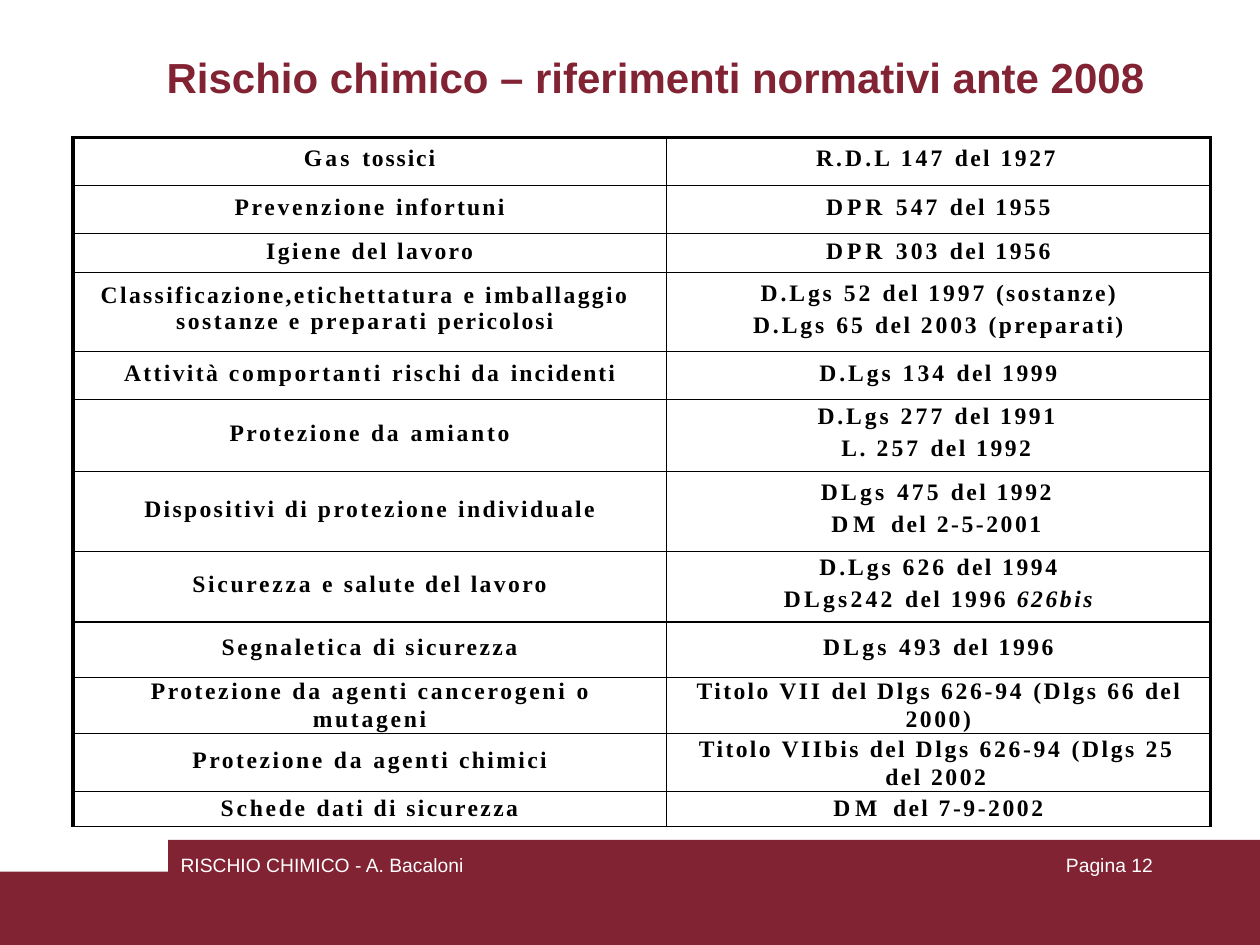
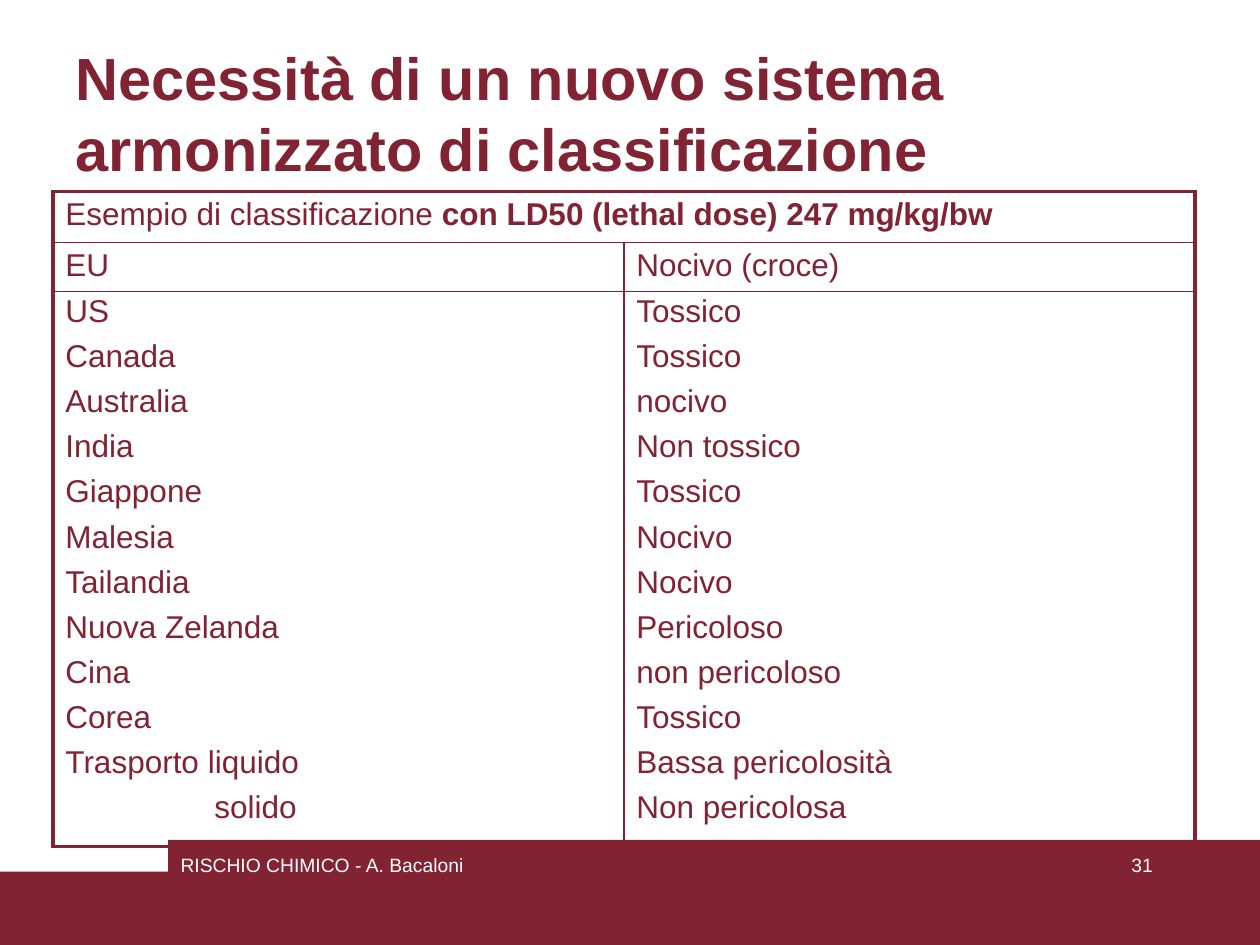
from dataclasses import dataclass, field
from itertools import groupby
from typing import Any, NamedTuple

from lxml.etree import SubElement
from pptx import Presentation
from pptx.dml.color import RGBColor
from pptx.enum.text import MSO_AUTO_SIZE, PP_ALIGN
from pptx.oxml.ns import qn
from pptx.util import Cm, Pt


class Style(NamedTuple):
    font: str
    size: float
    color: str
    bold: bool = False
    tracking: float = 0


@dataclass(frozen=True)
class Theme:
    brand: str = "822333"
    ink: str = "000000"
    title: Style = Style("Arial", 24, "822333", True)
    big_title: Style = Style("Arial", 34, "822333", True)
    footer: Style = Style("Arial", 11, "FFFFFF")
    law: Style = Style("Times New Roman", 13.5, "000000", True, 1.5)
    country: Style = Style("Arial", 18, "822333")


class Box(NamedTuple):
    left: float
    top: float
    width: float
    height: float


@dataclass(frozen=True)
class Line:
    text: str
    before: float = 0
    left: float | None = None
    first: float = 0
    spacing: Any = None
    tail: str = ""
    tail_format: dict[str, bool] = field(default_factory=dict)


class Row(NamedTuple):
    height: float
    cells: list[list[Line]]


class Grid(NamedTuple):
    box: Box
    columns: list[float]
    rows: list[Row]
    verticals: list[float]
    horizontals: list[float]
    color: str
    style: Style


THEME = Theme()
SLIDE_W, SLIDE_H = 25.4, 19.05
BAND = [(SLIDE_W, 16.93), (3.39, 16.93), (3.39, 17.57), (0, 17.57), (0, SLIDE_H), (SLIDE_W, SLIDE_H)]
FOOTER_BOX = Box(3.61, 17.2, 5.8, 0.5)
PAGE_BOX = Box(21.46, 17.2, 1.94, 0.5)

TRACKING_WORDS = {
    2.8: "DM",
    2.2: "DPR",
    1.9: "Gas DLgs DLgs242",
    1.8: "R.D.L 147 547 303 52 65 134 277 257 475 626 493",
    1.7: "D.Lgs da 1997 2003",
    1.6: "Prevenzione comportanti amianto Sicurezza cancerogeni mutageni VII Dlgs 626-94 66 25 Schede",
    1.4: "del lavoro Classificazione,etichettatura imballaggio (preparati) Attività rischi Dispositivi "
         "di individuale salute sicurezza Titolo chimici dati",
    1.3: "infortuni (sostanze)",
    1.2: "pericolosi incidenti",
    1.1: "tossici o",
}
TRACKING = {word: value for value, words in TRACKING_WORDS.items() for word in words.split()}


def law(height: float, subject: str, before: float, *acts: Line) -> Row:
    return Row(height, [[Line(subject, before)], list(acts)])


LAWS = [
    law(0.97, "Gas tossici", 4.9, Line("R.D.L 147 del 1927", 4.9, 3.02)),
    law(0.97, "Prevenzione infortuni", 5, Line("DPR 547 del 1955", 5)),
    law(0.79, "Igiene del lavoro", 2.8, Line("DPR 303 del 1956", 2.8)),
    Row(1.59, [
        [Line("Classificazione,etichettatura e imballaggio sostanze e preparati pericolosi",
              5.5, 2.08, -1.52, 1.01)],
        [Line("D.Lgs 52 del 1997 (sostanze)", 4.2), Line("D.Lgs 65 del 2003 (preparati)", 3.5)],
    ]),
    law(0.97, "Attività comportanti rischi da incidenti", 5, Line("D.Lgs 134 del 1999", 5)),
    law(1.44, "Protezione da amianto", 11.9,
        Line("D.Lgs 277 del 1991", 1.9, 3.05), Line("L. 257 del 1992", 3.5, 3.53)),
    law(1.62, "Dispositivi di protezione individuale", 14.2,
        Line("DLgs 475 del 1992", 4.5, 3.12), Line("DM del 2-5-2001", 3.5, 3.33)),
    law(1.42, "Sicurezza e salute del lavoro", 11.5,
        Line("D.Lgs 626 del 1994", 1.8),
        Line("DLgs242 del 1996", 3.5, tail="626bis", tail_format={"italic": True})),
    law(1.11, "Segnaletica di sicurezza", 7.1, Line("DLgs 493 del 1996", 7.1)),
    Row(1.14, [
        [Line(first, spacing=Pt(15.7)), Line(second, 0.2, spacing=Pt(15.8))]
        for first, second in [
            ("Protezione da agenti cancerogeni o", "mutageni"),
            ("Titolo VII del Dlgs 626-94 (Dlgs 66 del", "2000)"),
        ]
    ]),
    law(1.17, "Protezione da agenti chimici", 7.7,
        Line("Titolo VIIbis del Dlgs 626-94 (Dlgs 25 del 2002", 0, 4.42, -3.76, Pt(16.4))),
    law(0.71, "Schede dati di sicurezza", 2, Line("DM del 7-9-2002", 2)),
]

COUNTRIES = [
    ("US", "Tossico"), ("Canada", "Tossico"), ("Australia", "nocivo"), ("India", "Non tossico"),
    ("Giappone", "Tossico"), ("Malesia", "Nocivo"), ("Tailandia", "Nocivo"),
    ("Nuova Zelanda", "Pericoloso"), ("Cina", "non pericoloso"), ("Corea", "Tossico"),
    ("Trasporto liquido", "Bassa pericolosità"),
]
INDENT = 0.25
RATINGS = [
    Row(1.03, [[Line("Esempio di classificazione", 3.1, INDENT,
                     tail="con LD50 (lethal dose) 247 mg/kg/bw", tail_format={"bold": True})]]),
    Row(0.99, [[Line(text, 3.1, INDENT)] for text in ("EU", "Nocivo (croce)")]),
    *(Row(0.91, [[Line(text, 1.2, INDENT)] for text in pair]) for pair in COUNTRIES),
    Row(1.17, [[Line("solido", 1.2, 3.25)], [Line("Non pericolosa", 1.2, INDENT)]]),
]

LAW_GRID = Grid(Box(1.47, 2.77, 22.93, 13.9), [11.96, 10.97], LAWS,
                [2.25, 0.75, 2.25], [2.25] + [0.75] * (len(LAWS) - 1) + [0.5],
                THEME.ink, THEME.law)
RATING_GRID = Grid(Box(1.07, 3.86, 23.02, 13.2), [11.51, 11.51], RATINGS,
                   [2.25, 1, 2.25], [2.25, 1, 1] + [0] * (len(RATINGS) - 3) + [2.25],
                   THEME.brand, THEME.country)


def set_all(target: Any, values: dict[str, Any]) -> None:
    for name, value in values.items():
        setattr(target, name, value)


def add_run(p: Any, text: str, style: Style, tracking: float, extra: dict[str, bool]) -> None:
    r = p.add_run()
    r.text = text
    set_all(r.font, {"name": style.font, "size": Pt(style.size), "bold": style.bold, **extra})
    r.font.color.rgb = RGBColor.from_string(style.color)
    if tracking:
        r._r.get_or_add_rPr().set("spc", str(round(tracking * 100)))


def write(tf: Any, lines: list[Line], style: Style) -> None:
    def tracking(word: str) -> float:
        return TRACKING.get(word, style.tracking) if style.tracking else 0

    for i, line in enumerate(lines):
        p = tf.add_paragraph() if i else tf.paragraphs[0]
        set_all(p, {
            "alignment": PP_ALIGN.CENTER if line.left is None else PP_ALIGN.LEFT,
            "space_before": Pt(line.before),
            "line_spacing": line.spacing,
        })
        pPr = p._p.get_or_add_pPr()
        pPr.set("marL", str(Cm(line.left or 0)))
        pPr.set("indent", str(Cm(line.first)))
        groups = [(value, " ".join(words)) for value, words in groupby(line.text.split(), tracking)]
        for n, (value, text) in enumerate(groups, 1):
            gap = " " if n < len(groups) or line.tail else ""
            add_run(p, text + gap, style, value, {})
        if line.tail:
            add_run(p, line.tail, style, style.tracking, line.tail_format)


def add_text(s: Any, box: Box, line: Line, style: Style) -> None:
    tf = s.shapes.add_textbox(*map(Cm, box)).text_frame
    set_all(tf, {
        "word_wrap": True, "auto_size": MSO_AUTO_SIZE.NONE,
        "margin_left": 0, "margin_right": 0, "margin_bottom": 0, "margin_top": Pt(line.before),
    })
    write(tf, [line], style)


def set_border(cell: Any, side: str, width: float, color: str) -> None:
    ln = SubElement(cell._tc.get_or_add_tcPr(), qn(f"a:ln{side}"), w=str(Pt(width)))
    if width:
        fill = SubElement(ln, qn("a:solidFill"))
        SubElement(fill, qn("a:srgbClr"), val=color)
    else:
        SubElement(ln, qn("a:noFill"))


def add_grid(s: Any, grid: Grid) -> None:
    shape = s.shapes.add_table(len(grid.rows), len(grid.columns), *map(Cm, grid.box))
    table = shape.table
    set_all(table, {"first_row": False, "horz_banding": False})
    for column, width in zip(table.columns, grid.columns):
        column.width = Cm(width)
    for i, row in enumerate(grid.rows):
        table.rows[i].height = Cm(row.height)
        if len(row.cells) < len(grid.columns):
            table.cell(i, 0).merge(table.cell(i, len(grid.columns) - 1))
        for j in range(len(grid.columns)):
            cell = table.cell(i, j)
            span = cell.span_width if cell.is_merge_origin else 1
            edges = {
                "L": 0 if cell.is_spanned else grid.verticals[j],
                "R": grid.verticals[j + span],
                "T": grid.horizontals[i],
                "B": grid.horizontals[i + 1],
            }
            for side, width in edges.items():
                set_border(cell, side, width, grid.color)
            cell.fill.background()
            if not cell.is_spanned:
                lines = row.cells[j]
                set_all(cell, {"margin_left": 0, "margin_right": 0, "margin_bottom": 0,
                               "margin_top": Pt(lines[0].before)})
                write(cell.text_frame, lines, grid.style)


def add_band(s: Any) -> None:
    start, *rest = [(Cm(x), Cm(y)) for x, y in BAND]
    builder = s.shapes.build_freeform(*start)
    builder.add_line_segments(rest, close=True)
    sp = builder.convert_to_shape()
    sp.shadow.inherit = False
    sp.fill.solid()
    sp.fill.fore_color.rgb = RGBColor.from_string(THEME.brand)
    sp.line.fill.background()


def add_page(prs: Any, box: Box, title: Line, style: Style, page: Line, grid: Grid) -> None:
    s = prs.slides.add_slide(prs.slide_layouts[6])
    add_band(s)
    add_text(s, box, title, style)
    add_text(s, FOOTER_BOX, Line("RISCHIO CHIMICO - A. Bacaloni", left=0.03), THEME.footer)
    add_text(s, PAGE_BOX, page, THEME.footer)
    add_grid(s, grid)


def main() -> None:
    prs = Presentation()
    set_all(prs, {"slide_width": Cm(SLIDE_W), "slide_height": Cm(SLIDE_H)})
    add_page(prs, Box(3.33, 1, 19.9, 1.09),
             Line("Rischio chimico – riferimenti normativi ante 2008", 1, 0.03),
             THEME.title, Line("Pagina 12", left=0.03), LAW_GRID)
    add_page(prs, Box(1.5, 0.79, 17.8, 2.95),
             Line("Necessità di un nuovo sistema armonizzato di classificazione", 0.9, 0.03),
             THEME.big_title, Line("31", left=1.35), RATING_GRID)
    prs.save("out.pptx")


if __name__ == "__main__":
    main()
